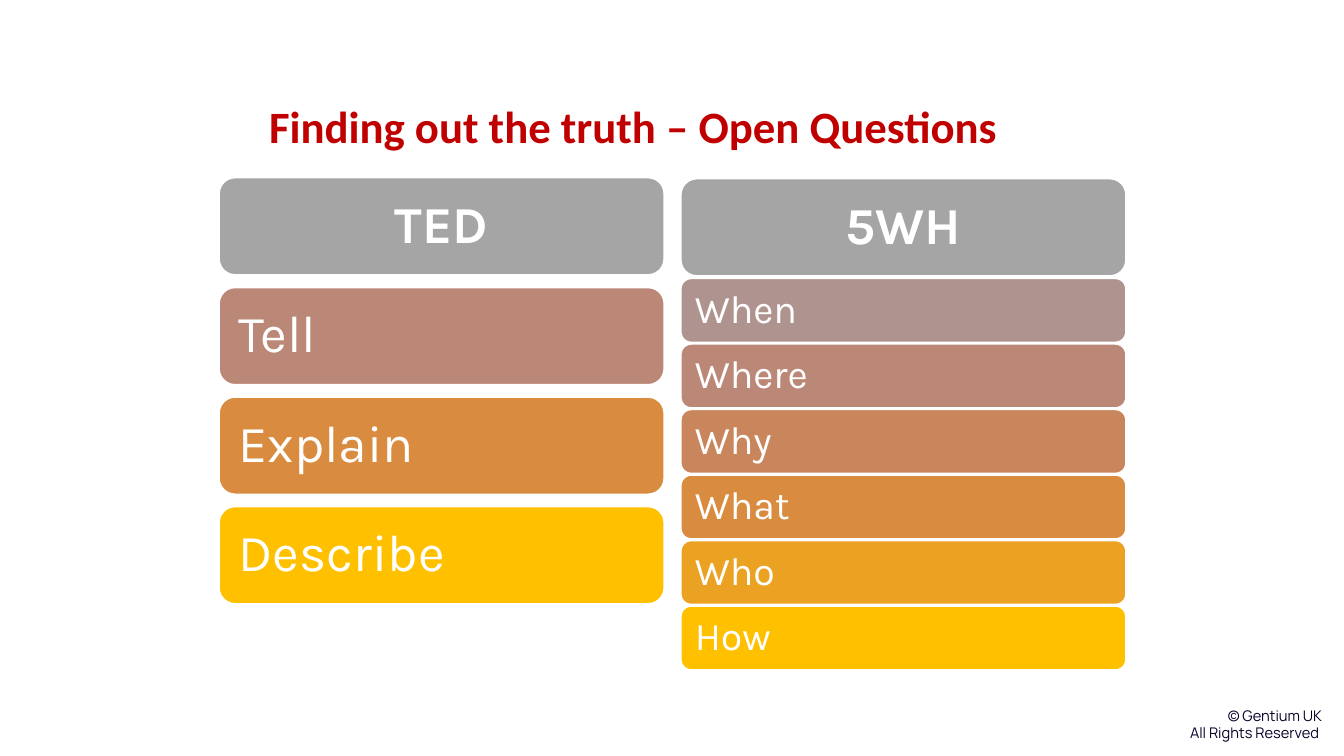
import pptx
import pptx.util
import pptx.dml.color
import pptx.enum.shapes
import pptx.enum.text

Inches = pptx.util.Inches
RGBColor = pptx.dml.color.RGBColor
ALIGN = pptx.enum.text.PP_ALIGN
ANCHOR = pptx.enum.text.MSO_ANCHOR

WHITE = RGBColor(0xFF, 0xFF, 0xFF)
RED = RGBColor(0xC0, 0x00, 0x00)
NAVY = RGBColor(0x0A, 0x01, 0x28)
GREY = RGBColor(0xA5, 0xA5, 0xA5)
MAUVE = RGBColor(0xAF, 0x93, 0x8F)
ROSE = RGBColor(0xBB, 0x87, 0x76)
CLAY = RGBColor(0xC9, 0x86, 0x5C)
ORANGE = RGBColor(0xD9, 0x8C, 0x3F)
AMBER = RGBColor(0xEB, 0xA1, 0x21)
GOLD = RGBColor(0xFF, 0xC0, 0x00)

TED = [("Tell", ROSE), ("Explain", ORANGE), ("Describe", GOLD)]
FIVE = [("When", MAUVE), ("Where", ROSE), ("Why", CLAY),
        ("What", ORANGE), ("Who", AMBER), ("How", GOLD)]
WIDE = 4.42
TALL = 0.97


def style(item, look):
    for name, value in look.items():
        setattr(item, name, value)


def write(para, text, size, face, color, bold=False):
    run = para.add_run()
    run.text = text
    style(run.font, {"size": pptx.util.Pt(size), "name": face, "bold": bold})
    run.font.color.rgb = color


def add_box(slide, left, top, width, height, wrap=True):
    box = slide.shapes.add_textbox(*map(Inches, (left, top, width, height)))
    box.text_frame.word_wrap = wrap
    return box.text_frame


def add_bar(slide, text, left, top, high, fill, size, inset, head=False):
    bar = slide.shapes.add_shape(
        pptx.enum.shapes.MSO_SHAPE.ROUNDED_RECTANGLE,
        *map(Inches, (left, top, WIDE, high)))
    bar.shadow.inherit = False
    bar.fill.solid()
    bar.fill.fore_color.rgb = fill
    bar.line.color.rgb = WHITE
    bar.line.width = pptx.util.Pt(1.5)
    style(bar.text_frame, {
        "word_wrap": True, "vertical_anchor": ANCHOR.MIDDLE,
        "margin_left": Inches(inset), "margin_right": Inches(inset),
        "margin_top": 0, "margin_bottom": 0})
    para = bar.text_frame.paragraphs[0]
    style(para, {"alignment": ALIGN.CENTER if head else ALIGN.LEFT,
                 "line_spacing": 0.9})
    write(para, text, size, "Karla", WHITE, head)


def add_list(slide, title, rows, left, top, first, step, high, size, inset):
    """Draw a grey heading bar with evenly spaced bars from first down."""
    add_bar(slide, title, left, top, TALL, GREY, 37, 0.15, True)
    for i, (text, fill) in enumerate(rows):
        add_bar(slide, text, left, first + i * step, high, fill, size, inset)


def add_rights(slide):
    rights = add_box(slide, 11.62, 6.96, 1.59, 0.45, False)
    for i, text in enumerate(("© Gentium UK", "All Rights Reserved ")):
        para = rights.add_paragraph() if i else rights.paragraphs[0]
        para.alignment = ALIGN.RIGHT
        write(para, text, 10.5, "Manrope", NAVY)


def main():
    deck = pptx.Presentation()
    style(deck, {"slide_width": Inches(13.33), "slide_height": Inches(7.5)})
    slide = deck.slides.add_slide(deck.slide_layouts[6])
    add_rights(slide)
    title = add_box(slide, 2.57, 0.99, 8.36, 0.71).paragraphs[0]
    title.line_spacing = 0.9
    write(title, "Finding out the truth – Open Questions",
          32, "Calibri", RED, True)
    add_list(slide, "TED", TED, 2.17, 1.76, 2.85, 3.26 / 3, TALL, 37, 0.15)
    add_list(slide, "5WH", FIVE, 6.75, 1.77, 2.76, 0.65, 0.64, 28, 0.11)
    deck.save("out.pptx")


if __name__ == "__main__":
    main()
